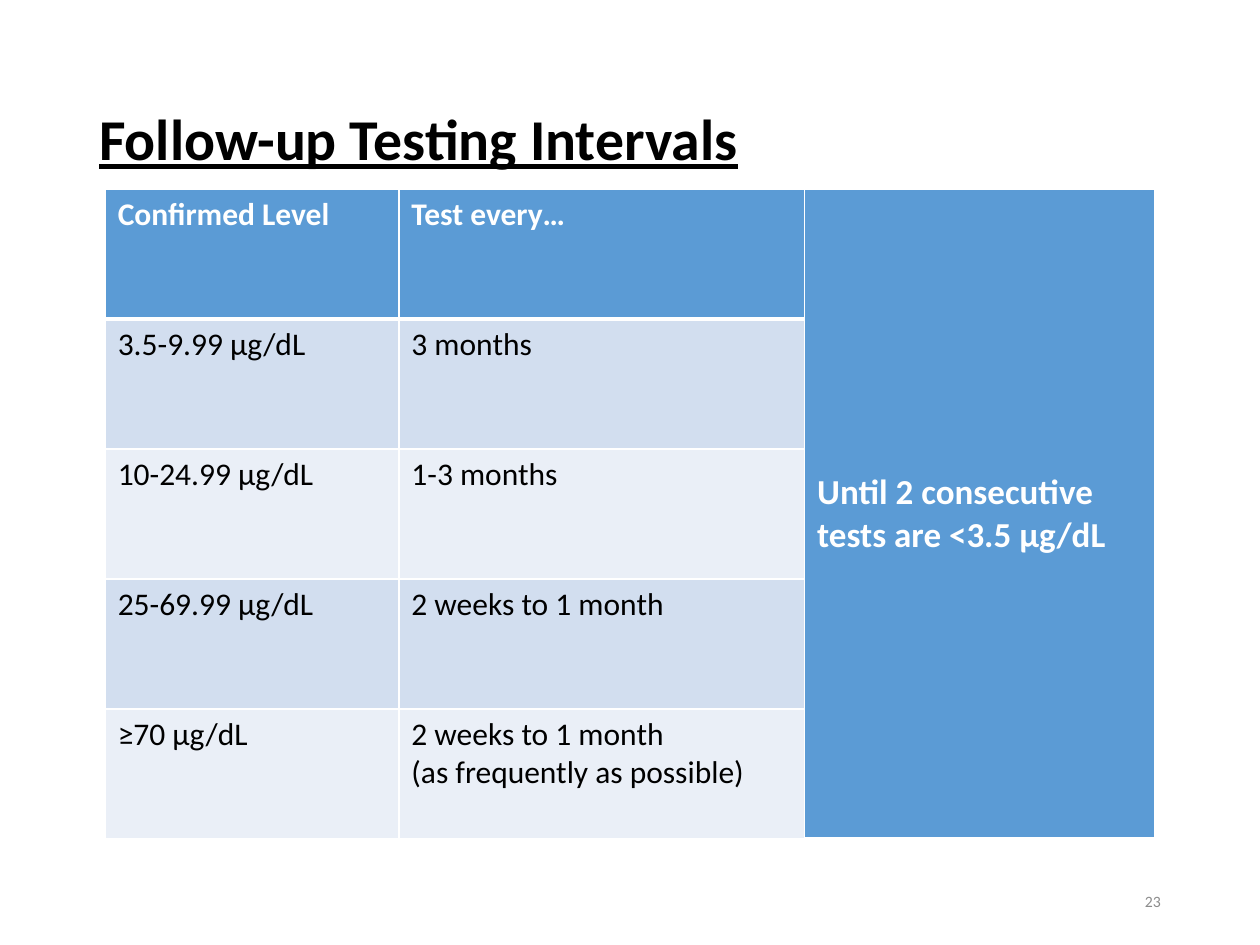
from dataclasses import dataclass

from lxml.etree import SubElement
from pptx import Presentation
from pptx.dml.color import RGBColor
from pptx.enum.text import MSO_ANCHOR, PP_ALIGN
from pptx.oxml.ns import qn
from pptx.util import Cm, Pt


@dataclass(frozen=True)
class Theme:
    font: str = "Calibri"
    black: str = "000000"
    white: str = "FFFFFF"
    grey: str = "8C8C8C"
    header: str = "5B9BD5"
    bands: tuple = ("D2DEEF", "EAEFF7")
    title_size: int = 33
    summary_size: int = 20
    body_size: int = 18
    number_size: int = 9
    thin_line: int = 1
    thick_line: int = 3


class SlideBuilder:
    """Draws themed text and tables on the current slide."""

    def __init__(self, slide, theme):
        self.slide = slide
        self.theme = theme

    def format_text(self, text_frame, size, color, bold=False, underline=False,
                    align=PP_ALIGN.LEFT, line_spacing=1.0):
        for paragraph in text_frame.paragraphs:
            paragraph.alignment = align
            paragraph.line_spacing = line_spacing
            for run in paragraph.runs:
                run.font.name = self.theme.font
                run.font.size = Pt(size)
                run.font.bold = bold
                run.font.underline = underline
                run.font.color.rgb = RGBColor.from_string(color)

    def text_box(self, text, left, top, width, height, size, color, **style):
        shape = self.slide.shapes.add_textbox(Cm(left), Cm(top), Cm(width), Cm(height))
        text_frame = shape.text_frame
        text_frame.word_wrap = True
        text_frame.vertical_anchor = MSO_ANCHOR.MIDDLE
        text_frame.text = text
        self.format_text(text_frame, size, color, **style)

    def border(self, cell, side, width):
        properties = cell._tc.get_or_add_tcPr()
        line = SubElement(properties, qn(f"a:ln{side}"), w=str(Pt(width)))
        fill = SubElement(line, qn("a:solidFill"))
        SubElement(fill, qn("a:srgbClr"), val=self.theme.white)

    def style_cell(self, cell, row):
        theme = self.theme
        is_header = row == 0
        thick_sides = {0: "B", 1: "T"}
        for side in "LRTB":
            is_thick = thick_sides.get(row) == side
            self.border(cell, side, theme.thick_line if is_thick else theme.thin_line)
        cell.fill.solid()
        fill = theme.header if is_header else theme.bands[(row - 1) % 2]
        cell.fill.fore_color.rgb = RGBColor.from_string(fill)
        self.format_text(cell.text_frame, theme.body_size,
                         theme.white if is_header else theme.black, bold=is_header)

    def interval_table(self, rows, summary, left, top, column_widths, row_height):
        shape = self.slide.shapes.add_table(
            len(rows), len(column_widths), Cm(left), Cm(top),
            Cm(sum(column_widths)), Cm(row_height * len(rows)))
        table = shape.table
        for column, width in zip(table.columns, column_widths):
            column.width = Cm(width)
        for row_index, texts in enumerate(rows):
            table.rows[row_index].height = Cm(row_height)
            for column_index, text in enumerate(texts):
                cell = table.cell(row_index, column_index)
                cell.text_frame.text = text
                self.style_cell(cell, row_index)
        last_column = len(column_widths) - 1
        summary_cell = table.cell(0, last_column)
        summary_cell.merge(table.cell(len(rows) - 1, last_column))
        summary_cell.text_frame.text = summary
        summary_cell.vertical_anchor = MSO_ANCHOR.MIDDLE
        self.style_cell(summary_cell, 0)
        self.format_text(summary_cell.text_frame, self.theme.summary_size,
                         self.theme.white, bold=True)


def main():
    presentation = Presentation()
    presentation.slide_width = Cm(25.4)
    presentation.slide_height = Cm(19.05)
    theme = Theme()
    builder = SlideBuilder(
        presentation.slides.add_slide(presentation.slide_layouts[6]), theme)

    builder.text_box("Follow-up Testing Intervals", 1.75, 1.02, 21.9, 3.68,
                     theme.title_size, theme.black, bold=True, underline=True,
                     line_spacing=0.9)
    rows = [
        ("Confirmed Level", "Test every…"),
        ("3.5-9.99 µg/dL", "3 months"),
        ("10-24.99 µg/dL", "1-3 months"),
        ("25-69.99 µg/dL", "2 weeks to 1 month"),
        ("≥70 µg/dL", "2 weeks to 1 month\n(as frequently as possible)"),
    ]
    builder.interval_table(rows, "Until 2 consecutive tests are <3.5 µg/dL",
                           2.12, 3.81, (5.92, 8.18, 7.06), 2.62)
    builder.text_box("23", 17.93, 17.65, 5.72, 1.02, theme.number_size, theme.grey,
                     align=PP_ALIGN.RIGHT)
    presentation.save("out.pptx")


if __name__ == "__main__":
    main()
